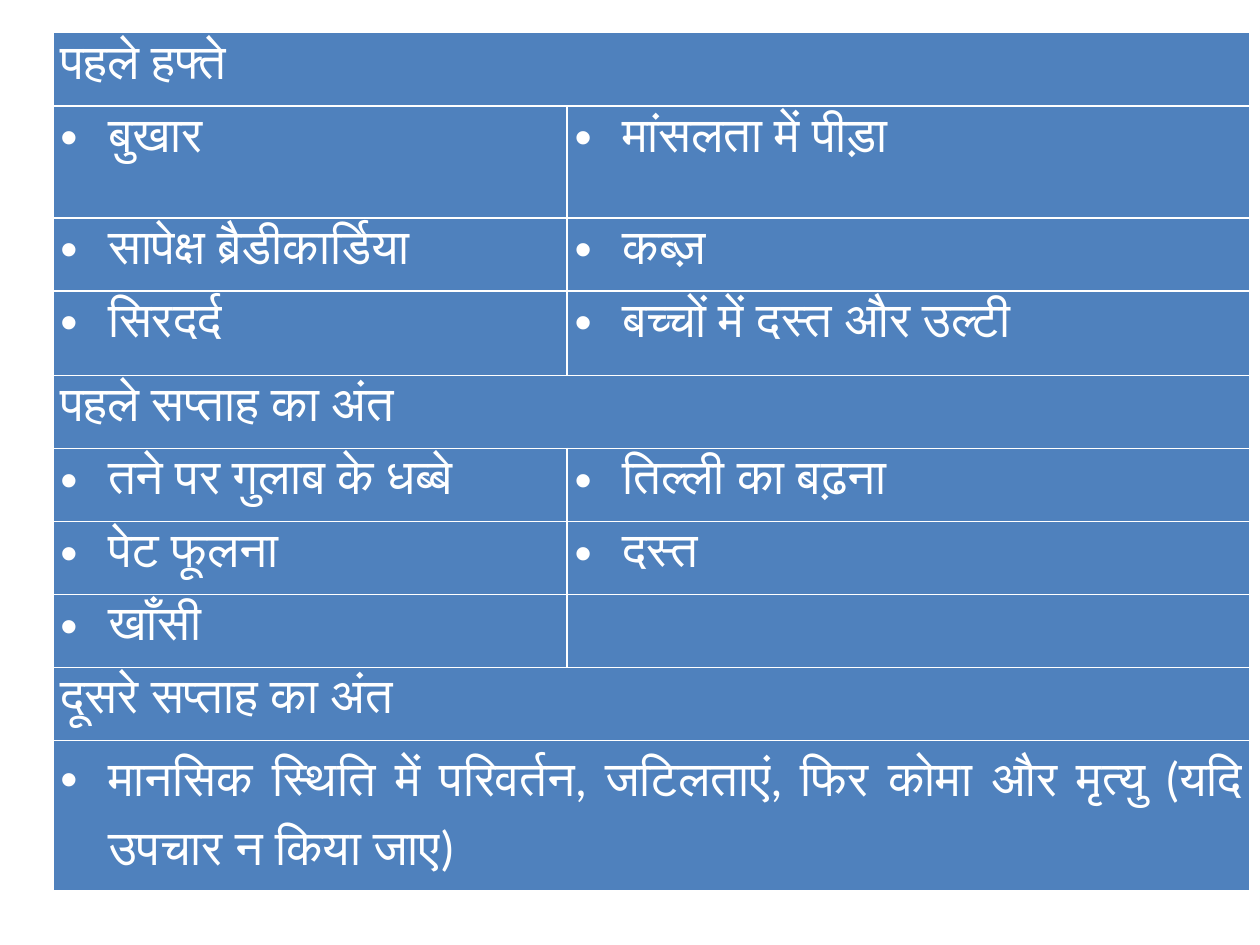
from lxml.etree import SubElement
from pptx import Presentation
from pptx.dml.color import RGBColor
from pptx.enum.text import PP_ALIGN
from pptx.oxml import parse_xml
from pptx.oxml.ns import nsdecls, qn
from pptx.util import Inches, Pt

COLORS = {"cell": "4F81BD", "white": "FFFFFF"}
COLUMN_WIDTHS = [4.08, 5.42]
ROW_HEIGHT = 0.58
ROWS = [
    {"heading": "पहले हफ्ते"},
    {"items": ["बुखार", "मांसलता में पीड़ा"], "height": 0.89},
    {"items": ["सापेक्ष ब्रैडीकार्डिया", "कब्ज़"]},
    {"items": ["सिरदर्द", "बच्चों में दस्त और उल्टी"], "height": 0.67},
    {"heading": "पहले सप्ताह का अंत"},
    {"items": ["तने पर गुलाब के धब्बे", "तिल्ली का बढ़ना"]},
    {"items": ["पेट फूलना", "दस्त"]},
    {"items": ["खाँसी", ""]},
    {"heading": "दूसरे सप्ताह का अंत"},
    {
        "items": ["मानसिक स्थिति में परिवर्तन, जटिलताएं, फिर कोमा और मृत्यु (यदि उपचार न किया जाए)"],
        "height": 1.19,
    },
]


def add_bullet(para, indent=0.38, tab=0.5):
    properties = para._p.get_or_add_pPr()
    properties.set("marL", str(Inches(indent)))
    properties.set("indent", str(-Inches(indent)))
    SubElement(properties, qn("a:buFont"), typeface="Arial")
    SubElement(properties, qn("a:buChar"), char="•")
    tabs = SubElement(properties, qn("a:tabLst"))
    SubElement(tabs, qn("a:tab"), pos=str(Inches(tab)), algn="l")


def write_text(para, text, size=28, color="white", font="Calibri", bullet=False):
    para.alignment = PP_ALIGN.JUSTIFY
    para.line_spacing = 1.15
    para.space_after = Pt(10)
    if bullet:
        add_bullet(para)
    span = para.add_run()
    span.text = text
    span.font.name = font
    span.font.size = Pt(size)
    span.font.bold = False
    span.font.color.rgb = RGBColor.from_string(COLORS[color])


def format_cell(cell, color="cell", border="white", width=1):
    cell.margin_left = cell.margin_right = Inches(0.06)
    cell.margin_top = cell.margin_bottom = 0
    cell.fill.solid()
    cell.fill.fore_color.rgb = RGBColor.from_string(COLORS[color])
    properties = cell._tc.get_or_add_tcPr()
    for position, side in enumerate(["lnL", "lnR", "lnT", "lnB"]):
        line = parse_xml(
            f'<a:{side} {nsdecls("a")} w="{Pt(width)}"><a:solidFill>'
            f'<a:srgbClr val="{COLORS[border]}"/></a:solidFill></a:{side}>'
        )
        properties.insert(position, line)


def fill_row(table, index, row):
    table.rows[index].height = Inches(row.get("height", ROW_HEIGHT))
    texts = row.get("items") or [row["heading"]]
    cells = [table.cell(index, column) for column in range(len(COLUMN_WIDTHS))]
    for cell in cells:
        format_cell(cell)
    if len(texts) == 1:
        cells[0].merge(cells[-1])
    for cell, text in zip(cells, texts):
        if text:
            write_text(cell.text_frame.paragraphs[0], text, bullet="items" in row)


def add_symptom_table(page):
    height = sum(row.get("height", ROW_HEIGHT) for row in ROWS)
    table = page.shapes.add_table(
        len(ROWS), len(COLUMN_WIDTHS),
        Inches(0.42), Inches(0.26), Inches(sum(COLUMN_WIDTHS)), Inches(height),
    ).table
    table.horz_banding = False
    for column, width in zip(table.columns, COLUMN_WIDTHS):
        column.width = Inches(width)
    for index, row in enumerate(ROWS):
        fill_row(table, index, row)


def main():
    deck = Presentation()
    deck.slide_width, deck.slide_height = Inches(10), Inches(7.5)
    page = deck.slides.add_slide(deck.slide_layouts[6])
    add_symptom_table(page)
    deck.save("out.pptx")


if __name__ == "__main__":
    main()
